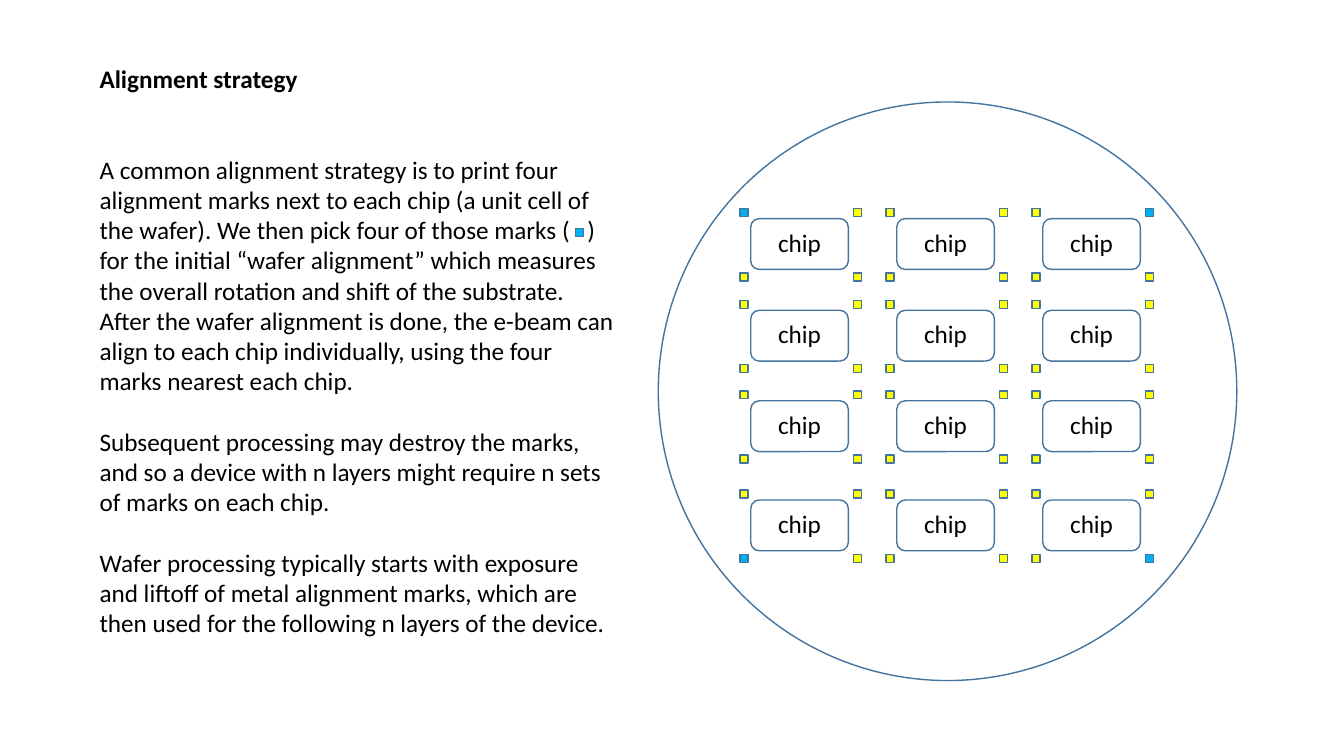
from dataclasses import dataclass
from itertools import product

from pptx import Presentation
from pptx.dml.color import RGBColor
from pptx.enum.shapes import MSO_SHAPE
from pptx.enum.text import MSO_ANCHOR, PP_ALIGN
from pptx.util import Cm, Pt

ELLIPSE = MSO_SHAPE.OVAL
ROUNDED = MSO_SHAPE.ROUNDED_RECTANGLE
RECTANGLE = MSO_SHAPE.RECTANGLE
MIDDLE = MSO_ANCHOR.MIDDLE
CENTER = PP_ALIGN.CENTER


@dataclass(frozen=True)
class Theme:
    font: str = "Calibri"
    size: Pt = Pt(18)
    blank_line: float = 21.6
    outline_width: Pt = Pt(1)
    text: RGBColor = RGBColor(0x00, 0x00, 0x00)
    outline: RGBColor = RGBColor(0x43, 0x73, 0x9E)
    chip_mark: RGBColor = RGBColor(0xFF, 0xFF, 0x00)
    wafer_mark: RGBColor = RGBColor(0x00, 0xB0, 0xF0)


THEME = Theme()
MARK = 0.2
ROW_OFFSETS = (2.69, 5.0, 7.28, 9.78)
COLUMN_OFFSETS = tuple(2.06 + 3.68 * column for column in range(3))

HEADING = "Alignment strategy"
STRATEGY_BEFORE_MARK = (
    "A common alignment strategy is to print four alignment marks next to each chip "
    "(a unit cell of the wafer). We then pick four of those marks ("
)
STRATEGY_AFTER_MARK = (
    ") for the initial “wafer alignment” which measures the overall rotation and shift "
    "of the substrate. After the wafer alignment is done, the e-beam can align to each "
    "chip individually, using the four marks nearest each chip."
)
SUBSEQUENT = (
    "Subsequent processing may destroy the marks, and so a device with n layers might "
    "require n sets of marks on each chip."
)
PROCESSING = (
    "Wafer processing typically starts with exposure and liftoff of metal alignment "
    "marks, which are then used for the following n layers of the device."
)


def style_paragraph(paragraph, bold=False):
    paragraph.font.name = THEME.font
    paragraph.font.size = THEME.size
    paragraph.font.bold = bold
    paragraph.font.color.rgb = THEME.text


def add_outlined(slide, preset, left, top, width, height, fill=None):
    outlined = slide.shapes.add_shape(preset, Cm(left), Cm(top), Cm(width), Cm(height))
    outlined.shadow.inherit = False
    outlined.line.color.rgb = THEME.outline
    outlined.line.width = THEME.outline_width
    if fill is None:
        outlined.fill.background()
    else:
        outlined.fill.solid()
        outlined.fill.fore_color.rgb = fill
    return outlined


def add_mark(slide, left, top, fill):
    add_outlined(slide, RECTANGLE, left, top, MARK, MARK, fill)


def add_chip_cell(slide, left, top, width, height, wafer_corner):
    chip = add_outlined(slide, ROUNDED, left + 0.27, top + 0.25, width - 0.6, height - 0.54)
    label = chip.text_frame
    label.margin_left = label.margin_right = label.margin_top = 0
    label.margin_bottom = Cm(0.1)
    label.vertical_anchor = MIDDLE
    label.text = "chip"
    label.paragraphs[0].alignment = CENTER
    style_paragraph(label.paragraphs[0])
    for right, bottom in product((False, True), repeat=2):
        fill = THEME.wafer_mark if (right, bottom) == wafer_corner else THEME.chip_mark
        add_mark(slide, left + right * (width - MARK), top + bottom * (height - MARK), fill)


def add_wafer(slide, left, top, diameter):
    add_outlined(slide, ELLIPSE, left, top, diameter, diameter)
    edge_columns = {COLUMN_OFFSETS[0]: False, COLUMN_OFFSETS[-1]: True}
    edge_rows = {ROW_OFFSETS[0]: False, ROW_OFFSETS[-1]: True}
    for down, across in product(ROW_OFFSETS, COLUMN_OFFSETS):
        wafer_corner = (edge_columns.get(across), edge_rows.get(down))
        add_chip_cell(slide, left + across, top + down, 3.06, 1.82, wafer_corner)


def add_explanation(slide, left, top, width, height):
    explanation = slide.shapes.add_textbox(Cm(left), Cm(top), Cm(width), Cm(height))
    frame = explanation.text_frame
    frame.word_wrap = True
    heading = frame.paragraphs[0]
    heading.text = HEADING
    style_paragraph(heading, bold=True)

    strategy = frame.add_paragraph()
    strategy.add_run().text = STRATEGY_BEFORE_MARK
    mark_gap = strategy.add_run()
    mark_gap.text = " "
    mark_gap.font._element.set("spc", "810")
    strategy.add_run().text = STRATEGY_AFTER_MARK
    style_paragraph(strategy)
    strategy.space_before = Pt(2 * THEME.blank_line)

    for passage in (SUBSEQUENT, PROCESSING):
        paragraph = frame.add_paragraph()
        paragraph.text = passage
        style_paragraph(paragraph)
        paragraph.space_before = Pt(THEME.blank_line)

    add_mark(slide, left + 12.24, top + 4.29, THEME.wafer_mark)


def main():
    presentation = Presentation()
    presentation.slide_width = Cm(33.87)
    presentation.slide_height = Cm(19.05)
    slide = presentation.slides.add_slide(presentation.slide_layouts[6])
    add_wafer(slide, 16.59, 2.57, 14.58)
    add_explanation(slide, 2.26, 1.47, 13.49, 14.88)
    presentation.save("out.pptx")


if __name__ == "__main__":
    main()
